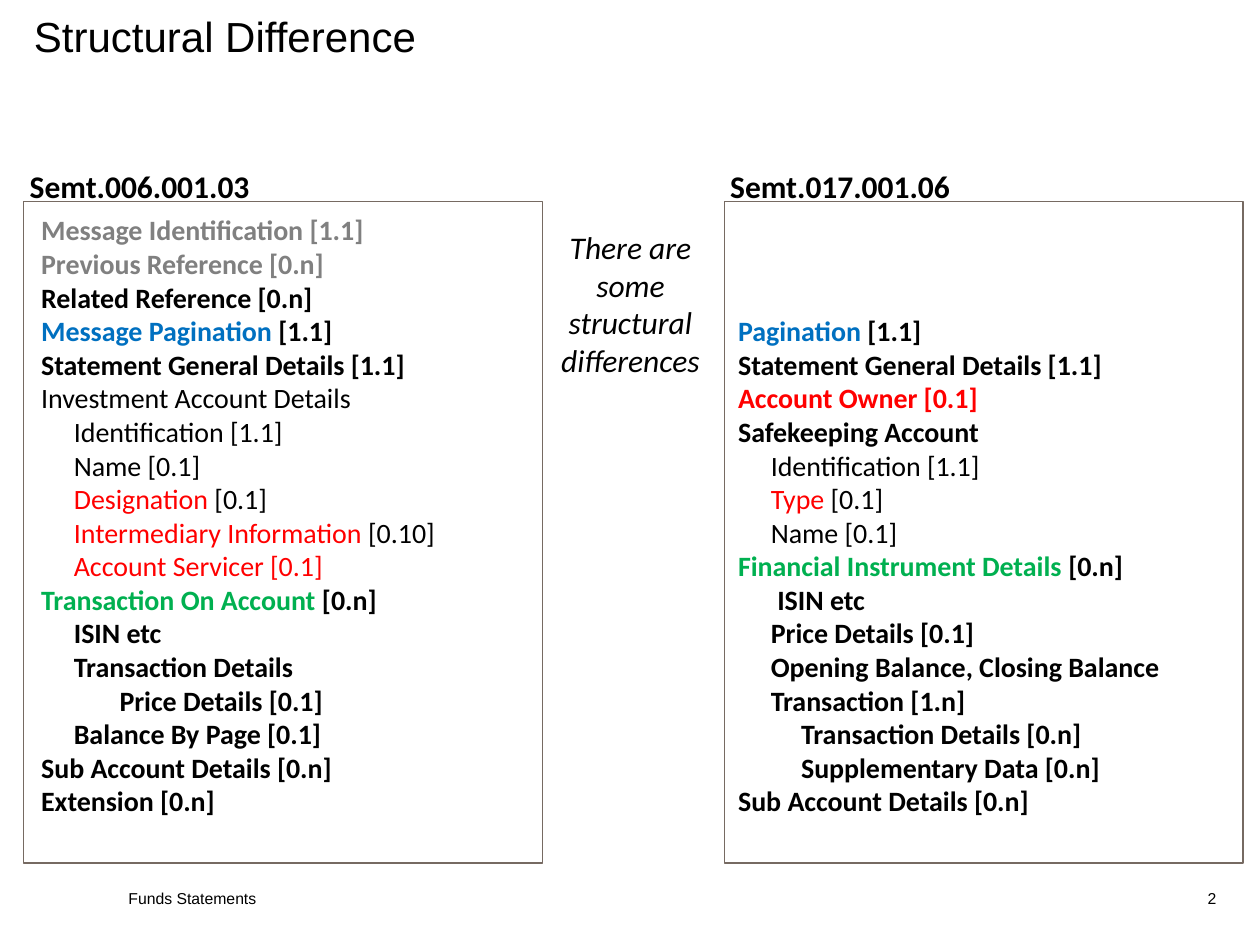
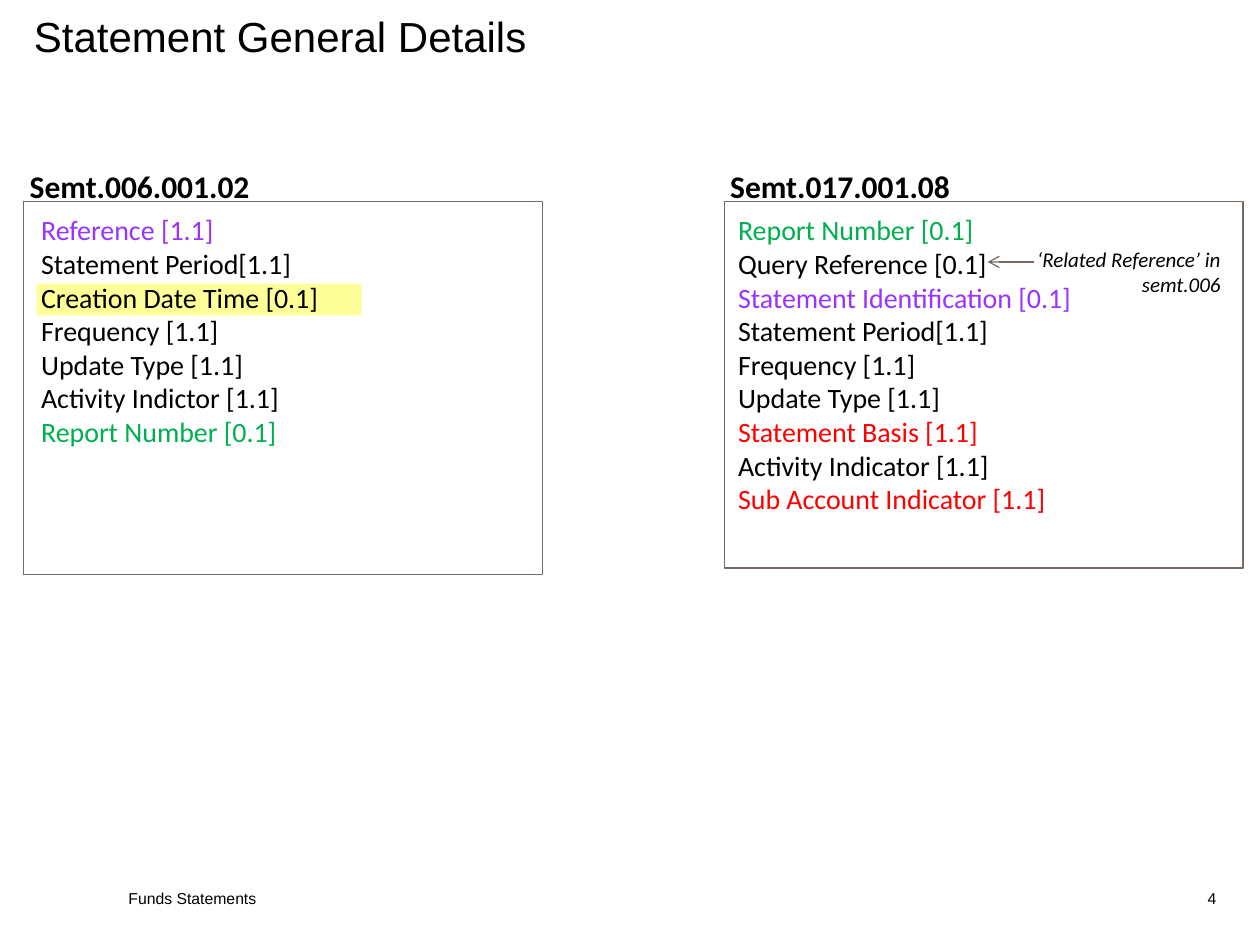
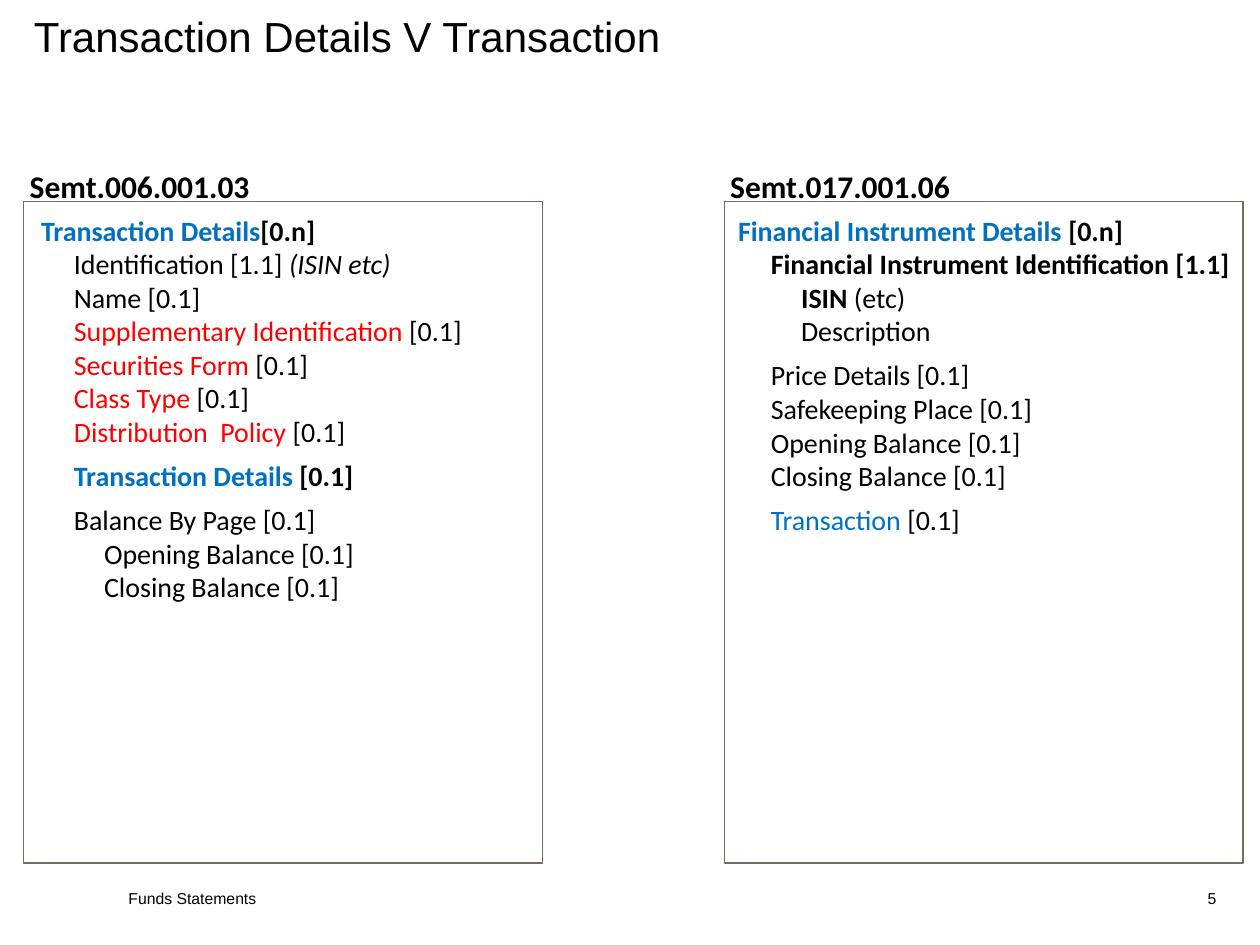
from dataclasses import dataclass

import pptx
import pptx.dml.color
import pptx.enum.shapes
import pptx.enum.text
import pptx.oxml
import pptx.util
from pptx.oxml import ns

Cm = pptx.util.Cm
Pt = pptx.util.Pt
RGBColor = pptx.dml.color.RGBColor
Align = pptx.enum.text.PP_ALIGN
Anchor = pptx.enum.text.MSO_ANCHOR
Preset = pptx.enum.shapes.MSO_SHAPE

# Colours
BLACK = RGBColor(0x00, 0x00, 0x00)
GREY = RGBColor(0x80, 0x80, 0x80)
BLUE = RGBColor(0x00, 0x70, 0xC0)
RED = RGBColor(0xFF, 0x00, 0x00)
GREEN = RGBColor(0x00, 0xB0, 0x50)
PURPLE = RGBColor(0x99, 0x33, 0xFF)
YELLOW = RGBColor(0xFF, 0xFF, 0x99)
BROWN = RGBColor(0x76, 0x6A, 0x62)

# Fonts
HEADING_FONT = "Arial"
BODY_FONT = "Calibri"

# Shared measures, in centimetres
LEFT, RIGHT = 0.48, 14.6
PANEL_TOP, PANEL_WIDTH, PANEL_HEIGHT = 4.06, 10.46, 13.34
LIST_TOP, LINE_HEIGHT = 4.17, 0.68
INDENTS = (0, 0.66, 1.27)


@dataclass
class Run:
    text: str
    color: RGBColor = BLACK
    bold: bool = False
    italic: bool = False


@dataclass
class Line:
    runs: tuple
    indent: float = 0
    before: float = 0


def bold(text, color=BLACK):
    return Run(text, color, bold=True)


def line(*runs, level=0, indent=None, before=0):
    """Plain strings become regular black runs."""
    runs = tuple(Run(r) if isinstance(r, str) else r for r in runs)
    return Line(runs, INDENTS[level] if indent is None else indent, before)


class Deck:
    def __init__(self):
        self.prs = pptx.Presentation()
        self.prs.slide_width, self.prs.slide_height = Cm(25.4), Cm(19.05)
        self.slide = None

    def add_slide(self, title, number):
        self.slide = self.prs.slides.add_slide(self.prs.slide_layouts[5])
        heading = self.slide.shapes.title
        heading.left, heading.top = Cm(0.43), Cm(0)
        heading.width, heading.height = Cm(24.71), Cm(1.42)
        self.fill_text(heading.text_frame, [line(title)], 24, HEADING_FONT,
                       anchor=Anchor.MIDDLE)
        for text, left, width, align in (("Funds Statements", 2.34, 15.77, Align.LEFT),
                                         (str(number), 22.66, 2.11, Align.RIGHT)):
            self.text(left, 17.78, width, 0.64, [line(text)], 9, HEADING_FONT,
                      align, Anchor.MIDDLE)

    def fill_text(self, frame, lines, size, font=BODY_FONT, align=Align.LEFT,
                  anchor=Anchor.TOP):
        frame.word_wrap = True
        frame.auto_size = pptx.enum.text.MSO_AUTO_SIZE.NONE
        frame.vertical_anchor = anchor
        for index, item in enumerate(lines):
            paragraph = frame.add_paragraph() if index else frame.paragraphs[0]
            paragraph.alignment = align
            paragraph.space_before = Pt(item.before)
            if item.indent:
                paragraph._p.get_or_add_pPr().set("marL", str(Cm(item.indent)))
            for part in item.runs:
                run = paragraph.add_run()
                run.text = part.text
                run.font.name, run.font.size = font, Pt(size)
                run.font.bold, run.font.italic = part.bold, part.italic
                run.font.color.rgb = part.color

    def text(self, left, top, width, height, lines, size, *style):
        box = self.slide.shapes.add_textbox(Cm(left), Cm(top), Cm(width), Cm(height))
        self.fill_text(box.text_frame, lines, size, *style)

    def rectangle(self, left, top, width, height, fill=None, outline=None):
        shape = self.slide.shapes.add_shape(
            Preset.RECTANGLE, Cm(left), Cm(top), Cm(width), Cm(height))
        shape.shadow.inherit = False
        if fill is None:
            shape.fill.background()
        else:
            shape.fill.solid()
            shape.fill.fore_color.rgb = fill
        if outline is None:
            shape.line.fill.background()
        else:
            shape.line.color.rgb = outline
            shape.line.width = Pt(0.75)

    def message(self, left, name, lines, width, height=PANEL_HEIGHT, list_top=LIST_TOP):
        """A message name above a framed list of its elements."""
        self.text(left - 0.13, 3.25, 5.1, 1.02, [line(bold(name))], 18)
        self.rectangle(left, PANEL_TOP, PANEL_WIDTH, height, outline=BROWN)
        list_height = 0.25 + LINE_HEIGHT * len(lines) + sum(
            Pt(item.before).cm for item in lines)
        list_left = left + (0.1 if left == LEFT else 0.03)
        self.text(list_left, list_top, width, list_height, lines, 16)

    def arrow(self, x1, y1, x2, y2):
        connector = self.slide.shapes.add_connector(
            pptx.enum.shapes.MSO_CONNECTOR.STRAIGHT, Cm(x1), Cm(y1), Cm(x2), Cm(y2))
        connector.line.color.rgb = BROWN
        connector.line.width = Pt(0.75)
        head = pptx.oxml.parse_xml(f'<a:tailEnd {ns.nsdecls("a")} type="arrow"/>')
        connector.line._get_or_add_ln().append(head)
        no_effects = pptx.oxml.parse_xml(f'<a:effectLst {ns.nsdecls("a")}/>')
        connector._element.spPr.append(no_effects)

    def note(self, left, top, width, height, text, size, align):
        self.text(left, top, width, height, [line(Run(text, italic=True))], size,
                  BODY_FONT, align)


def structural_difference(deck):
    deck.add_slide("Structural Difference", 2)
    deck.message(LEFT, "Semt.006.001.03", [
        line(bold("Message Identification [1.1]", GREY)),
        line(bold("Previous Reference [0.n]", GREY)),
        line(bold("Related Reference [0.n]")),
        line(bold("Message Pagination ", BLUE), bold("[1.1]")),
        line(bold("Statement General Details [1.1]")),
        line("Investment Account Details"),
        line("Identification [1.1]", level=1),
        line("Name [0.1]", level=1),
        line(Run("Designation", RED), " [0.1]", level=1),
        line(Run("Intermediary Information ", RED), "[0.10]", level=1),
        line(Run("Account Servicer [0.1]", RED), level=1),
        line(bold("Transaction On Account ", GREEN), bold("[0.n]")),
        line(bold("ISIN etc"), level=1),
        line(bold("Transaction Details"), level=1),
        line(bold("Price Details [0.1]"), indent=1.58),
        line(bold("Balance By Page [0.1]"), level=1),
        line(bold("Sub Account Details [0.n]")),
        line(bold("Extension [0.n]")),
    ], width=8.53)
    deck.message(RIGHT, "Semt.017.001.06", [
        line(bold("Pagination ", BLUE), bold("[1.1]")),
        line(bold("Statement General Details [1.1]")),
        line(bold("Account Owner [0.1]", RED)),
        line(bold("Safekeeping Account")),
        line("Identification [1.1]", level=1),
        line(Run("Type", RED), " [0.1]", level=1),
        line("Name [0.1]", level=1),
        line(bold("Financial Instrument Details ", GREEN), bold("[0.n]")),
        line(bold("ISIN etc"), indent=0.79),
        line(bold("Price Details [0.1]"), level=1),
        line(bold("Opening Balance, Closing Balance"), level=1),
        line(bold("Transaction [1.n]"), level=1),
        line(bold("Transaction Details [0.n]"), level=2),
        line(bold("Supplementary Data [0.n]"), level=2),
        line(bold("Sub Account Details [0.n]")),
    ], width=9.09, list_top=6.2)
    deck.note(10.97, 4.47, 3.48, 3.33, "There are some structural differences",
              18, Align.CENTER)


def statement_general_details(deck):
    deck.add_slide("Statement General Details", 4)
    # Highlight behind the creation date
    deck.rectangle(0.74, 5.72, 6.55, 0.64, fill=YELLOW)
    deck.message(LEFT, "Semt.006.001.02", [
        line(Run("Reference [1.1]", PURPLE)),
        line("Statement Period[1.1]"),
        line("Creation Date Time [0.1]"),
        line("Frequency [1.1]"),
        line("Update Type [1.1]"),
        line("Activity Indictor [1.1]"),
        line(Run("Report Number [0.1]", GREEN)),
    ], width=6.17, height=7.52)
    deck.message(RIGHT, "Semt.017.001.08", [
        line(Run("Report Number [0.1]", GREEN)),
        line("Query Reference [0.1]"),
        line(Run("Statement Identification [0.1]", PURPLE)),
        line("Statement Period[1.1]"),
        line("Frequency [1.1]"),
        line("Update Type [1.1]"),
        line(Run("Statement Basis [1.1]", RED)),
        line("Activity Indicator [1.1]"),
        line(Run("Sub Account Indicator [1.1]", RED)),
    ], width=7.32, height=7.39)
    # Where the query reference comes from
    deck.note(19.96, 4.85, 4.9, 1.27, "‘Related Reference’ in semt.006", 12, Align.RIGHT)
    deck.arrow(20.85, 5.28, 19.91, 5.28)


def transaction_details(deck):
    deck.add_slide("Transaction Details V Transaction", 5)
    deck.message(LEFT, "Semt.006.001.03", [
        line(bold("Transaction Details", BLUE), bold("[0.n]")),
        line("Identification [1.1] ", Run("(ISIN etc)", italic=True), level=1),
        line("Name [0.1]", level=1),
        line(Run("Supplementary Identification ", RED), "[0.1]", level=1),
        line(Run("Securities Form", RED), " [0.1]", level=1),
        line(Run("Class Type ", RED), "[0.1]", level=1),
        line(Run("Distribution  Policy ", RED), "[0.1]", level=1),
        line(bold("Transaction Details ", BLUE), bold("[0.1]"), level=1, before=6),
        line("Balance By Page [0.1]", level=1, before=6),
        line("Opening Balance [0.1]", level=2),
        line("Closing Balance [0.1]", level=2),
    ], width=9.09)
    deck.message(RIGHT, "Semt.017.001.06", [
        line(bold("Financial Instrument Details ", BLUE), bold("[0.n]")),
        line(bold("Financial Instrument Identification [1.1]"), level=1),
        line(bold("ISIN "), "(etc)", level=2),
        line("Description", level=2),
        line("Price Details [0.1]", level=1, before=6),
        line("Safekeeping Place [0.1]", level=1),
        line("Opening Balance [0.1]", level=1),
        line("Closing Balance [0.1]", level=1),
        line(Run("Transaction", BLUE), " [0.1]", level=1, before=6),
    ], width=10.54)


def main():
    deck = Deck()
    structural_difference(deck)
    statement_general_details(deck)
    transaction_details(deck)
    deck.prs.save("out.pptx")


if __name__ == "__main__":
    main()
